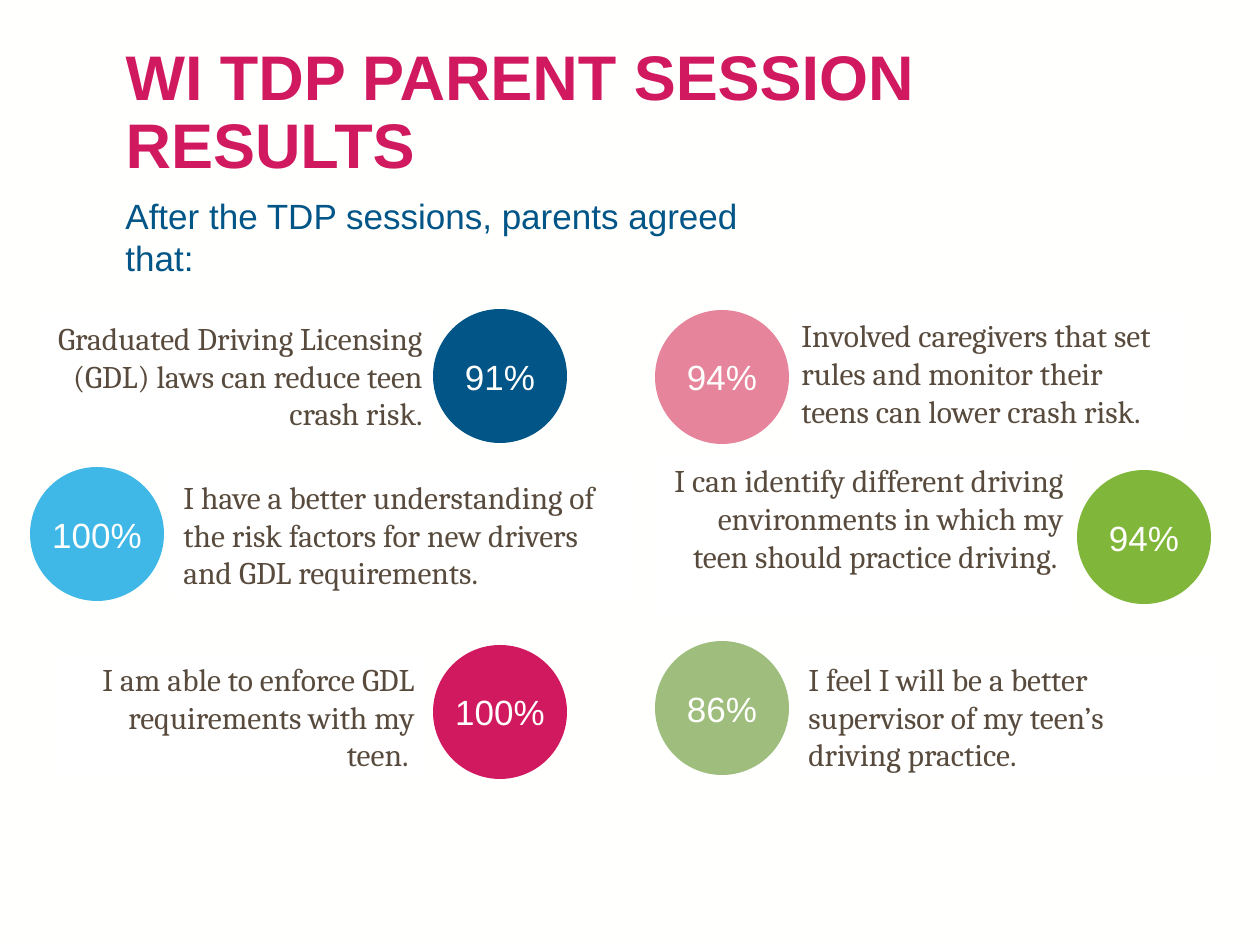
from dataclasses import dataclass

from pptx import Presentation
from pptx import util as u
from pptx.dml.color import RGBColor
from pptx.enum import shapes, text

EMU_PER_PX = 914400 / 126
CIRCLE_SIZE = 134
LEFT, CENTER, RIGHT = text.PP_ALIGN.LEFT, text.PP_ALIGN.CENTER, text.PP_ALIGN.RIGHT
TOP, MIDDLE = text.MSO_ANCHOR.TOP, text.MSO_ANCHOR.MIDDLE


@dataclass(frozen=True)
class Theme:
    background: str = "FFFFFE"
    panel: str = "FFFFFF"
    body: str = "584B3D"
    navy: str = "025587"
    sky: str = "3FB8E7"
    magenta: str = "D11960"
    pink: str = "E5849B"
    green: str = "80B639"
    sage: str = "9FBE7E"
    sans: str = "Arial"
    serif: str = "Cambria"
    title_size: int = 36
    lead_size: int = 20
    body_size: int = 18


THEME = Theme()

# statement, its box, alignment, anchor, percentage, circle corner, circle colour
RESULTS = [
    ("Graduated Driving Licensing (GDL) laws can reduce teen crash risk.",
     (39, 312, 396, 127), RIGHT, MIDDLE, "91%", (433, 309), THEME.navy),
    ("Involved caregivers that set rules and monitor their teens can lower crash risk.",
     (789, 310, 398, 127), LEFT, TOP, "94%", (655, 310), THEME.pink),
    ("I have a better understanding of the risk factors for new drivers and GDL requirements.",
     (171, 471, 462, 127), LEFT, MIDDLE, "100%", (30, 467), THEME.sky),
    ("I can identify different driving environments in which my teen should practice driving. ",
     (656, 455, 420, 165), RIGHT, TOP, "94%", (1077, 470), THEME.green),
    ("I am able to enforce GDL requirements with my teen. ",
     (54, 653, 373, 127), RIGHT, MIDDLE, "100%", (433, 645), THEME.magenta),
    ("I feel I will be a better supervisor of my teen’s driving practice.",
     (796, 653, 418, 127), LEFT, MIDDLE, "86%", (655, 641), THEME.sage),
]


def px(value):
    return u.Emu(round(value * EMU_PER_PX))


def color(value):
    return RGBColor.from_string(value)


def write(shape, wording, *, font, size, fill, bold=False, align=LEFT,
          anchor=TOP, inset=None, line_spacing=None):
    frame = shape.text_frame
    frame.word_wrap = True
    frame.auto_size = text.MSO_AUTO_SIZE.NONE
    frame.vertical_anchor = anchor
    if inset is not None:
        frame.margin_left = frame.margin_right = px(inset)
        frame.margin_top = frame.margin_bottom = px(inset)
    paragraph = frame.paragraphs[0]
    paragraph.alignment = align
    paragraph.line_spacing = line_spacing
    run = paragraph.add_run()
    run.text = wording
    run.font.name = font
    run.font.size = u.Pt(size)
    run.font.bold = bold
    run.font.color.rgb = color(fill)


def add_filled_shape(slide, kind, box, fill):
    shape = slide.shapes.add_shape(kind, *map(px, box))
    shape.shadow.inherit = False
    shape.fill.solid()
    shape.fill.fore_color.rgb = color(fill)
    shape.line.fill.background()
    return shape


def add_statement(slide, wording, box, align, anchor):
    panel = add_filled_shape(slide, shapes.MSO_SHAPE.RECTANGLE, box, THEME.panel)
    write(panel, wording, font=THEME.serif, size=THEME.body_size,
          fill=THEME.body, align=align, anchor=anchor)


def add_percentage(slide, wording, corner, fill):
    box = (*corner, CIRCLE_SIZE, CIRCLE_SIZE)
    circle = add_filled_shape(slide, shapes.MSO_SHAPE.OVAL, box, fill)
    write(circle, wording, font=THEME.sans, size=THEME.lead_size,
          fill=THEME.background, align=CENTER, anchor=MIDDLE, inset=0)


def set_title(slide, wording, box):
    title = slide.shapes.title
    title.left, title.top, title.width, title.height = map(px, box)
    write(title, wording, font=THEME.sans, size=THEME.title_size, bold=True,
          fill=THEME.magenta, anchor=MIDDLE, line_spacing=0.9)


def add_lead(slide, wording, box):
    lead = slide.shapes.add_textbox(*map(px, box))
    write(lead, wording, font=THEME.sans, size=THEME.lead_size, fill=THEME.navy)


def main():
    presentation = Presentation()
    presentation.slide_width = px(1260)
    presentation.slide_height = px(945)
    slide = presentation.slides.add_slide(presentation.slide_layouts[5])
    slide.background.fill.solid()
    slide.background.fill.fore_color.rgb = color(THEME.background)

    set_title(slide, "WI TDP PARENT SESSION RESULTS", (113, 44, 1034, 141))
    add_lead(slide, "After the TDP sessions, parents agreed that:", (113, 188, 664, 97))
    for statement, box, align, anchor, percentage, corner, fill in RESULTS:
        add_statement(slide, statement, box, align, anchor)
        add_percentage(slide, percentage, corner, fill)

    presentation.save("out.pptx")


if __name__ == "__main__":
    main()
